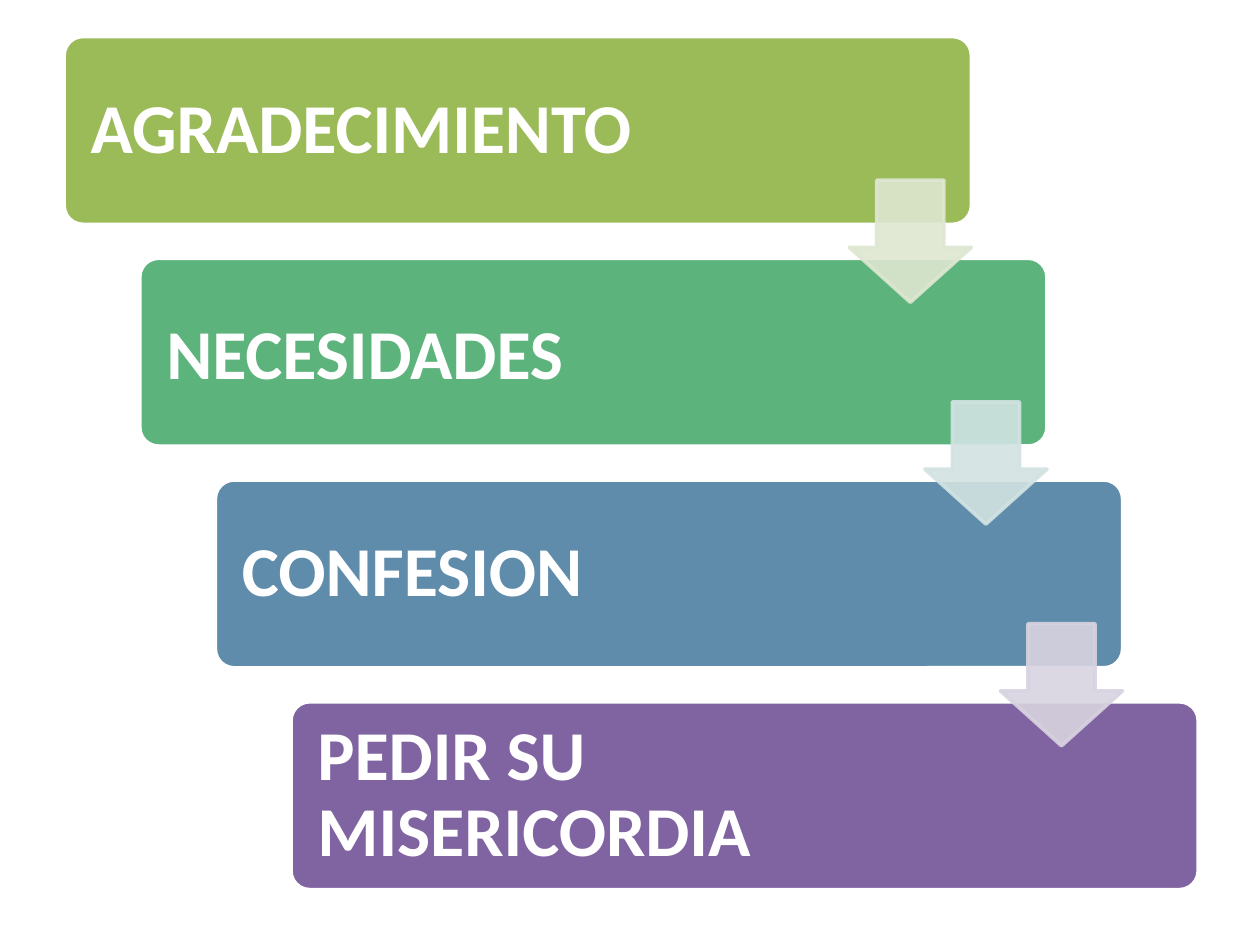
from dataclasses import dataclass

from lxml import etree
from pptx import Presentation
from pptx.dml.color import RGBColor
from pptx.enum.shapes import MSO_SHAPE
from pptx.enum.text import MSO_ANCHOR
from pptx.oxml.ns import qn
from pptx.util import Inches, Pt

ROUNDED = MSO_SHAPE.ROUNDED_RECTANGLE
DOWN_ARROW = MSO_SHAPE.DOWN_ARROW
MIDDLE = MSO_ANCHOR.MIDDLE
BLANK_LAYOUT = 6


@dataclass(frozen=True)
class Theme:
    font: str = "Calibri"
    label_size: int = 40
    outline: int = 2
    white: str = "FFFFFF"
    steps: tuple = ("9BBB59", "5CB37C", "608CAB", "8064A2")
    arrows: tuple = ("DEE7D1", "D2E3E2", "D8D3E0")
    arrow_opacity: int = 90


THEME = Theme()

# Label and its vertical offset within the step
STEPS = (
    ("AGRADECIMIENTO", 0),
    ("NECESIDADES", 0.04),
    ("CONFESION", 0),
    ("PEDIR SU MISERICORDIA", 0),
)
FIRST_LEFT, FIRST_TOP = 0.51, 0.29
STEP_RIGHT, STEP_DOWN = 0.6, 1.76
STEP_WIDTH, STEP_HEIGHT = 7.2, 1.49
LABEL_MARGIN, LABEL_INSET, LABEL_WIDTH = 0.04, 0.17, 5.54
ARROW_SIZE, ARROW_DROP = 0.97, 1.14


def add_block(slide, kind, box, adjustments, fill, line):
    block = slide.shapes.add_shape(kind, *map(Inches, box))
    block.shadow.inherit = False
    for index, value in enumerate(adjustments):
        block.adjustments[index] = value
    block.fill.solid()
    block.fill.fore_color.rgb = RGBColor.from_string(fill)
    block.line.color.rgb = RGBColor.from_string(line)
    block.line.width = Pt(THEME.outline)
    return block


def set_opacity(block, percent):
    """Make both the fill and the outline of a block translucent."""
    for color in block._element.spPr.iter(qn("a:srgbClr")):
        etree.SubElement(color, qn("a:alpha"), val=str(percent * 1000))


def add_label(slide, text, left, top):
    height = STEP_HEIGHT - 2 * LABEL_MARGIN
    label = slide.shapes.add_textbox(
        *map(Inches, (left, top, LABEL_WIDTH, height)))
    frame = label.text_frame
    frame.word_wrap = True
    frame.vertical_anchor = MIDDLE
    frame.margin_left = frame.margin_right = Inches(LABEL_INSET)
    frame.margin_top = frame.margin_bottom = Inches(LABEL_INSET)
    paragraph = frame.paragraphs[0]
    paragraph.line_spacing = 0.9
    run = paragraph.add_run()
    run.text = text
    run.font.name = THEME.font
    run.font.size = Pt(THEME.label_size)
    run.font.bold = True
    run.font.color.rgb = RGBColor.from_string(THEME.white)


def step_origin(index):
    return FIRST_LEFT + index * STEP_RIGHT, FIRST_TOP + index * STEP_DOWN


def add_step(slide, index, text, offset):
    left, top = step_origin(index)
    add_block(slide, ROUNDED, (left, top, STEP_WIDTH, STEP_HEIGHT), (0.1,),
              THEME.steps[index], THEME.white)
    add_label(slide, text, left + LABEL_MARGIN, top + LABEL_MARGIN + offset)


def add_arrow(slide, index, color):
    """Add the arrow leading from one step down to the next."""
    left, top = step_origin(index)
    box = (left + STEP_WIDTH - ARROW_SIZE, top + ARROW_DROP,
           ARROW_SIZE, ARROW_SIZE)
    # The preset lists the head length first, then the shaft width.
    arrow = add_block(slide, DOWN_ARROW, box, (0.55, 0.45), color, color)
    set_opacity(arrow, THEME.arrow_opacity)


def main():
    deck = Presentation()
    deck.slide_width, deck.slide_height = Inches(10), Inches(7.5)
    slide = deck.slides.add_slide(deck.slide_layouts[BLANK_LAYOUT])
    for index, (text, offset) in enumerate(STEPS):
        add_step(slide, index, text, offset)
    for index, color in enumerate(THEME.arrows):
        add_arrow(slide, index, color)
    deck.save("out.pptx")


if __name__ == "__main__":
    main()
